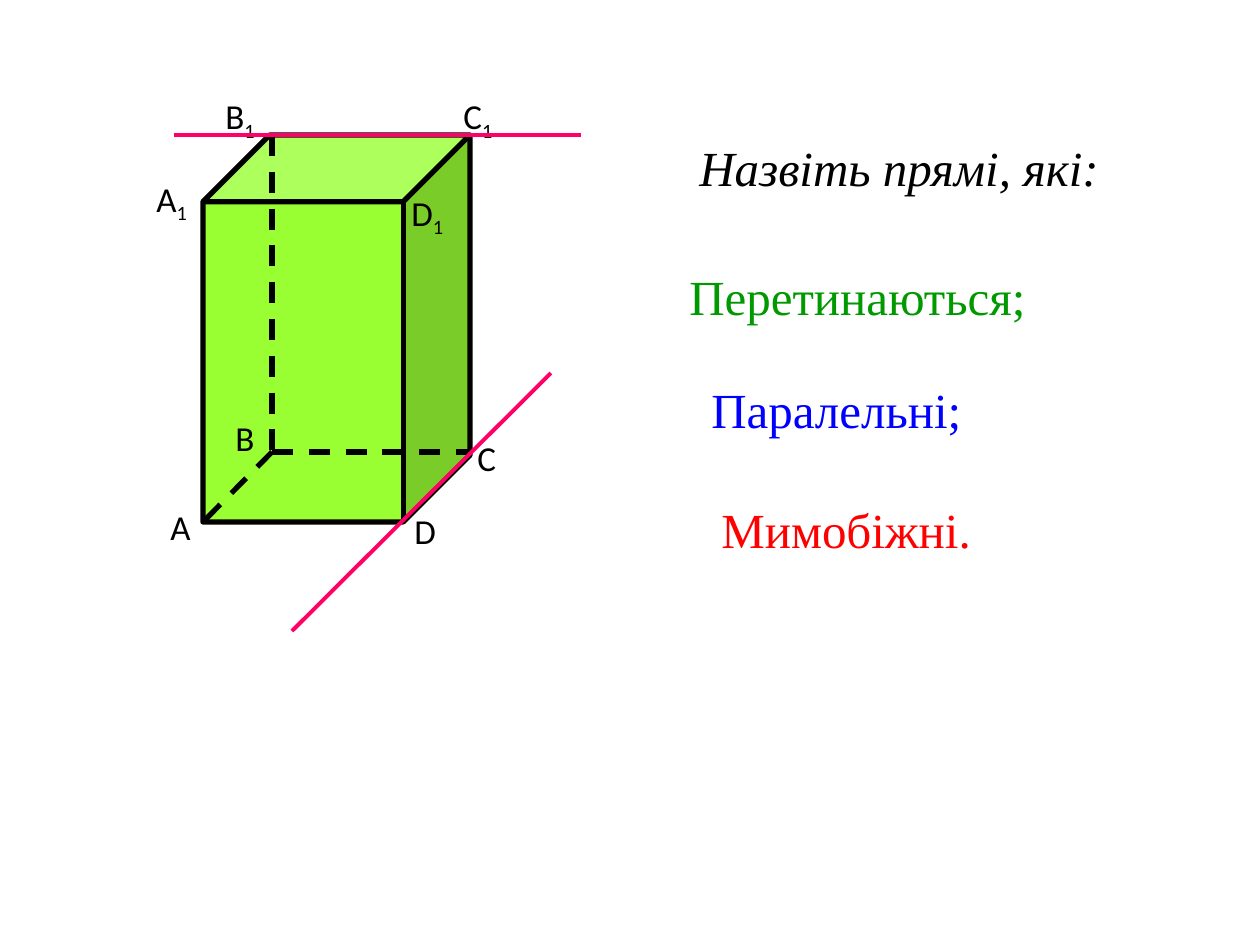
import pptx
import pptx.dml.color
import pptx.enum.dml
import pptx.enum.shapes
import pptx.enum.text
import pptx.oxml.xmlchemy
import pptx.util

PX = 914400 / 126
SLIDE = (1260, 945)
BLACK, GREEN, PINK = "000000", "99FF33", "FF0066"

CUBE = (203, 135, 267, 387)  # left, top, width, height
A, B, C = (203, 522), (272, 452), (471, 452)
HIDDEN_EDGES = [((B[0], CUBE[1]), B), (B, A), (B, C)]
MARKED_LINES = [((174, 135), (581, 135)), ((551, 373), (292, 631))]

# letter, subscript, left, top, width
VERTICES = [
    ("D", "", 402, 503, 50),
    ("A", "", 158, 499, 50),
    ("B", "", 223, 410, 49),
    ("C", "", 465, 430, 49),
    ("D", "1", 399, 185, 62),
    ("A", "1", 144, 171, 62),
    ("B", "1", 213, 88, 60),
    ("C", "1", 451, 88, 60),
]
# text, colour, italic, left, top, width
QUESTIONS = [
    ("Назвіть прямі, які:", BLACK, True, 687, 131, 452),
    ("Перетинаються;", "009900", False, 677, 260, 397),
    ("Паралельні;", "0000FF", False, 699, 373, 305),
    ("Мимобіжні.", "FF0000", False, 709, 493, 277),
]


def emu(*lengths):
    return [round(length * PX) for length in lengths]


def rgb(colour):
    return pptx.dml.color.RGBColor.from_string(colour)


def add_line(slide, start, end, colour, points, dashed=False):
    line = slide.shapes.add_connector(
        pptx.enum.shapes.MSO_CONNECTOR.STRAIGHT, *emu(*start, *end))
    line.line.color.rgb = rgb(colour)
    line.line.width = pptx.util.Pt(points)
    if dashed:
        line.line.dash_style = pptx.enum.dml.MSO_LINE.DASH
    line._element.spPr.append(pptx.oxml.xmlchemy.OxmlElement("a:effectLst"))


def add_label(slide, box):
    label = slide.shapes.add_textbox(*emu(*box))
    label.text_frame.word_wrap = False
    label.text_frame.auto_size = pptx.enum.text.MSO_AUTO_SIZE.SHAPE_TO_FIT_TEXT
    return label.text_frame.paragraphs[0]


def add_run(paragraph, text, font_name, points, colour, italic=False):
    run = paragraph.add_run()
    run.text = text
    run.font.name = font_name
    run.font.size = pptx.util.Pt(points)
    run.font.italic = italic
    run.font.color.rgb = rgb(colour)
    return run


def main():
    deck = pptx.Presentation()
    deck.slide_width, deck.slide_height = emu(*SLIDE)
    slide = deck.slides.add_slide(deck.slide_layouts[6])

    prism = slide.shapes.add_shape(
        pptx.enum.shapes.MSO_SHAPE.CUBE, *emu(*CUBE))
    prism.adjustments[0] = 0.25
    prism.shadow.inherit = False
    prism.fill.solid()
    prism.fill.fore_color.rgb = rgb(GREEN)
    prism.line.color.rgb = rgb(BLACK)
    prism.line.width = pptx.util.Pt(3)

    for start, end in HIDDEN_EDGES:
        add_line(slide, start, end, BLACK, 3, dashed=True)

    for letter, subscript, left, top, width in VERTICES:
        vertex = add_label(slide, (left, top, width, 54))
        add_run(vertex, letter, "Calibri", 20, BLACK)
        if subscript:
            index = add_run(vertex, subscript, "Calibri", 20, BLACK)
            index.font._element.set("baseline", "-25000")

    for start, end in MARKED_LINES:
        add_line(slide, start, end, PINK, 2.25)

    for text, colour, italic, left, top, width in QUESTIONS:
        question = add_label(slide, (left, top, width, 72))
        add_run(question, text, "Times New Roman", 28, colour, italic)

    deck.save("out.pptx")


if __name__ == "__main__":
    main()
